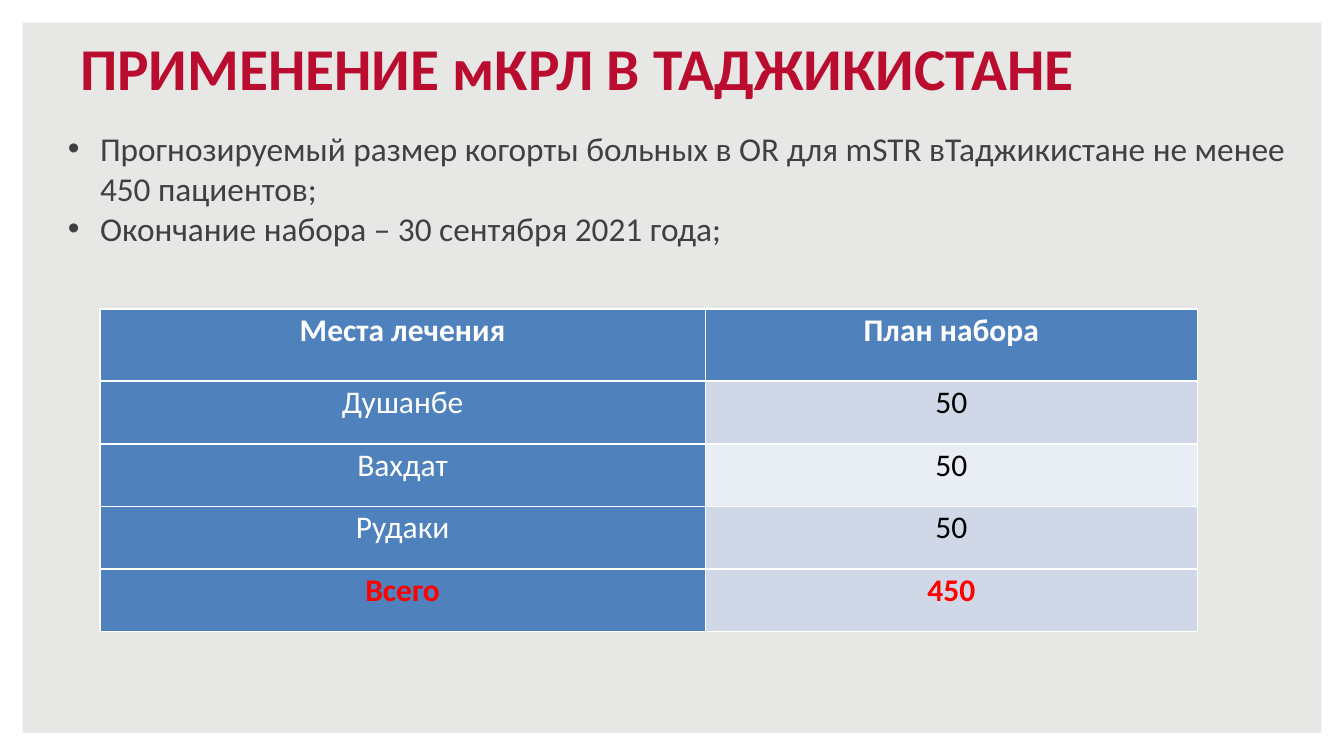
from pptx import Presentation
from pptx.dml.color import RGBColor
from pptx.enum.shapes import MSO_SHAPE
from pptx.enum.text import MSO_ANCHOR, MSO_AUTO_SIZE, PP_ALIGN
from pptx.util import Pt

FRAME = MSO_SHAPE.FRAME
BOTTOM, TOP = MSO_ANCHOR.BOTTOM, MSO_ANCHOR.TOP
LEFT, CENTER = PP_ALIGN.LEFT, PP_ALIGN.CENTER
NO_AUTOFIT = MSO_AUTO_SIZE.NONE

TITLE = "ПРИМЕНЕНИЕ мКРЛ В ТАДЖИКИСТАНЕ"
POINTS = [
    "Прогнозируемый размер когорты больных в OR для mSTR вТаджикистане не менее 450 пациентов;",
    "Окончание набора – 30 сентября 2021 года;",
]
ENROLMENT = [
    ("Места лечения", "План набора"),
    ("Душанбе", "50"),
    ("Вахдат", "50"),
    ("Рудаки", "50"),
    ("Всего", "450"),
]

FONT = "Calibri"
COLORS = {
    "background": "E7E7E5",
    "frame": "FFFFFF",
    "title": "BA0C2F",
    "body": "404040",
    "header": "4F81BD",
    "band_dark": "D0D8E8",
    "band_light": "E9EDF4",
    "on_header": "FFFFFF",
    "number": "000000",
    "total": "FF0000",
}

SLIDE_W, SLIDE_H = 725.76, 408.24
TITLE_BOX = (36, 13, 653, 46)
BODY_BOX = (29.5, 65.5, 674, 67.7)
BULLET_INDENT = 17.3
TABLE_LEFT, TABLE_TOP = 54, 167
COLUMN_WIDTHS = (326.9, 265.7)
HEADER_HEIGHT, ROW_HEIGHT = 38.9, 33.8


def color(name):
    return RGBColor.from_string(COLORS[name])


def paint(fill, name):
    fill.solid()
    fill.fore_color.rgb = color(name)


def format_runs(paragraph, size, color_name, bold=False):
    for run in paragraph.runs:
        run.font.name = FONT
        run.font.size = Pt(size)
        run.font.bold = bold
        run.font.color.rgb = color(color_name)


def place(placeholder, box, anchor):
    placeholder.left, placeholder.top, placeholder.width, placeholder.height = map(Pt, box)
    placeholder.text_frame.auto_size = NO_AUTOFIT
    placeholder.text_frame.vertical_anchor = anchor


def add_frame(slide):
    frame = slide.shapes.add_shape(FRAME, 0, 0, Pt(SLIDE_W), Pt(SLIDE_H))
    frame.adjustments[0] = 0.03
    frame.shadow.inherit = False
    paint(frame.fill, "frame")
    frame.line.fill.background()
    slide.shapes.element.insert(2, frame.element)  # behind the placeholders


def add_title(slide):
    title = slide.shapes.title
    place(title, TITLE_BOX, BOTTOM)
    title.text_frame.text = TITLE
    heading = title.text_frame.paragraphs[0]
    heading.alignment = LEFT
    format_runs(heading, 32, "title", bold=True)


def add_points(slide):
    body = slide.placeholders[1]
    place(body, BODY_BOX, TOP)
    body.text_frame.text = "\n".join(POINTS)
    for point in body.text_frame.paragraphs:
        point.space_before = Pt(0)
        properties = point._p.get_or_add_pPr()
        properties.set("marL", str(Pt(BULLET_INDENT)))
        properties.set("indent", str(-Pt(BULLET_INDENT)))
        format_runs(point, 18, "body")


def cell_colors(row, column):
    """Return the names of the fill and text colours of a table cell."""
    if row == 0 or column == 0:
        fill, text = "header", "on_header"
    else:
        fill, text = ("band_dark" if row % 2 else "band_light"), "number"
    if row == len(ENROLMENT) - 1:
        text, fill = "total", (fill if column == 0 else "band_dark")
    return fill, text


def add_enrolment_table(slide):
    last = len(ENROLMENT) - 1
    heights = [HEADER_HEIGHT] + [ROW_HEIGHT] * last
    table = slide.shapes.add_table(
        len(ENROLMENT), len(COLUMN_WIDTHS), Pt(TABLE_LEFT), Pt(TABLE_TOP),
        Pt(sum(COLUMN_WIDTHS)), Pt(sum(heights))).table
    table.first_col = True
    for column, width in zip(table.columns, COLUMN_WIDTHS):
        column.width = Pt(width)
    for r, (entries, height) in enumerate(zip(ENROLMENT, heights)):
        table.rows[r].height = Pt(height)
        for c, entry in enumerate(entries):
            cell = table.cell(r, c)
            fill, text = cell_colors(r, c)
            paint(cell.fill, fill)
            cell.margin_left = cell.margin_right = Pt(4.3)
            cell.margin_top = cell.margin_bottom = 0
            cell.text_frame.text = entry
            label = cell.text_frame.paragraphs[0]
            label.alignment = CENTER
            label.line_spacing = 1.06
            format_runs(label, 17, text, bold=r in (0, last))


def main():
    deck = Presentation()
    deck.slide_width, deck.slide_height = Pt(SLIDE_W), Pt(SLIDE_H)
    slide = deck.slides.add_slide(deck.slide_layouts[1])
    paint(slide.background.fill, "background")
    add_frame(slide)
    add_title(slide)
    add_points(slide)
    add_enrolment_table(slide)
    deck.save("out.pptx")


if __name__ == "__main__":
    main()
